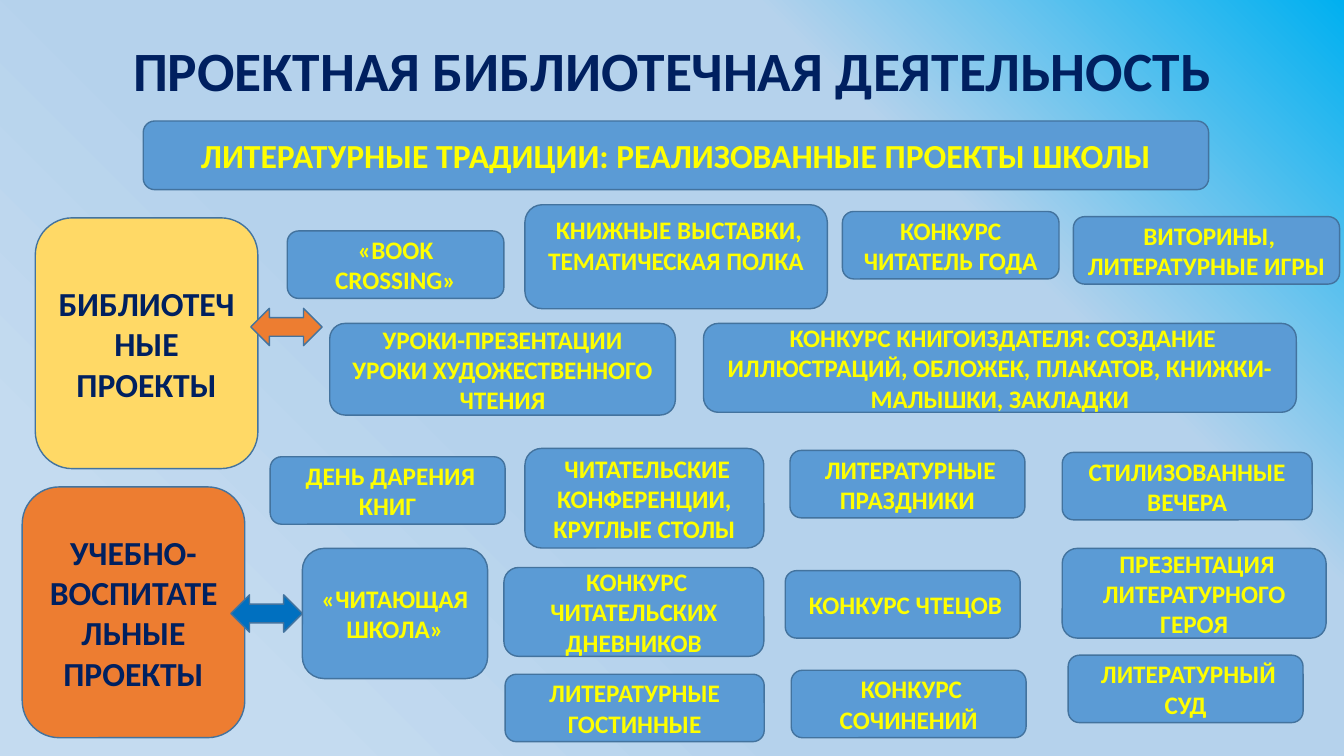
from lxml import etree
from pptx import Presentation
from pptx.dml.color import RGBColor
from pptx.enum import shapes, text
from pptx.oxml import ns
from pptx.util import Cm, Pt

COLORS = {
    "navy": "002060", "yellow": "FFFF00", "blue": "5B9BD5", "outline": "43739E",
    "sand": "FFD966", "orange": "ED7D31", "deep": "0070C0",
}
BACKDROP = [(0, "00B0F0"), (28, "B5D2EC"), (61, "B5D2EC"), (85, "C4DBF0")]
FONT = "Calibri"
ROW = 1.7  # height of a two-line project box

TITLE = "ПРОЕКТНАЯ БИБЛИОТЕЧНАЯ ДЕЯТЕЛЬНОСТЬ"
TITLE_BOX = (2.34, 1.02, 29.21, 1.65)
BANNER = "ЛИТЕРАТУРНЫЕ ТРАДИЦИИ: РЕАЛИЗОВАННЫЕ ПРОЕКТЫ ШКОЛЫ"
BANNER_BOX = (3.61, 3.05, 26.85, 1.73)
EXHIBITIONS = " КНИЖНЫЕ ВЫСТАВКИ, ТЕМАТИЧЕСКАЯ ПОЛКА"

# Text, then left, top, width and height in centimetres
PROJECTS = [
    ("«BOOK CROSSING»", 7.24, 5.82, 5.46, ROW),
    (EXHIBITIONS, 13.23, 5.16, 7.62, 2.62),
    ("КОНКУРС ЧИТАТЕЛЬ ГОДА", 21.23, 5.33, 5.46, ROW),
    (" ВИТОРИНЫ, ЛИТЕРАТУРНЫЕ ИГРЫ ", 27.05, 5.46, 6.71, ROW),
    ("УРОКИ-ПРЕЗЕНТАЦИИ\nУРОКИ ХУДОЖЕСТВЕННОГО ЧТЕНИЯ", 8.31, 8.15, 8.71, 2.31),
    (" КОНКУРС КНИГОИЗДАТЕЛЯ: СОЗДАНИЕ ИЛЛЮСТРАЦИЙ, ОБЛОЖЕК, ПЛАКАТОВ, "
     "КНИЖКИ-МАЛЫШКИ, ЗАКЛАДКИ", 17.73, 8.15, 14.94, 2.24),
    (" ДЕНЬ ДАРЕНИЯ КНИГ", 6.81, 11.51, 5.92, ROW),
    (" ЧИТАТЕЛЬСКИЕ КОНФЕРЕНЦИИ, КРУГЛЫЕ СТОЛЫ", 13.23, 11.3, 6.02, 2.51),
    (" ЛИТЕРАТУРНЫЕ ПРАЗДНИКИ", 19.91, 11.35, 5.92, ROW),
    ("СТИЛИЗОВАННЫЕ ВЕЧЕРА", 26.77, 11.4, 6.3, ROW),
    ("«ЧИТАЮЩАЯ ШКОЛА»", 7.62, 13.82, 4.67, 3.28),
    (" КОНКУРС ЧИТАТЕЛЬСКИХ ДНЕВНИКОВ", 12.7, 14.3, 6.55, 2.24),
    (" КОНКУРС ЧТЕЦОВ", 19.79, 14.38, 5.92, ROW),
    (" ПРЕЗЕНТАЦИЯ ЛИТЕРАТУРНОГО ГЕРОЯ", 26.77, 13.82, 6.65, 2.26),
    ("ЛИТЕРАТУРНЫЕ ГОСТИННЫЕ", 12.73, 16.99, 6.53, ROW),
    (" КОНКУРС СОЧИНЕНИЙ", 19.94, 16.89, 5.92, ROW),
    (" ЛИТЕРАТУРНЫЙ СУД", 26.92, 16.51, 5.92, ROW),
]
# Text, panel corner and colour, arrow corner and colour
GROUPS = [
    ("БИБЛИОТЕЧНЫЕ ПРОЕКТЫ", (0.89, 5.49), "sand", (6.32, 7.77), "orange"),
    ("УЧЕБНО-ВОСПИТАТЕЛЬНЫЕ ПРОЕКТЫ", (0.56, 12.27), "orange", (5.82, 14.99), "deep"),
]
PANEL_SIZE = (5.61, 6.32)
ARROW_SIZE = (1.8, 0.94)


def rgb(name):
    return RGBColor.from_string(COLORS[name])


def write(frame, words, size, color):
    frame.text = words
    frame.word_wrap = True
    frame.vertical_anchor = text.MSO_ANCHOR.MIDDLE
    for paragraph in frame.paragraphs:
        paragraph.alignment = text.PP_ALIGN.CENTER
        for run in paragraph.runs:
            run.font.name = FONT
            run.font.size = Pt(size)
            run.font.bold = True
            run.font.color.rgb = rgb(color)


def add_figure(slide, kind, box, fill):
    figure = slide.shapes.add_shape(kind, *map(Cm, box))
    figure.shadow.inherit = False
    figure.fill.solid()
    figure.fill.fore_color.rgb = rgb(fill)
    figure.line.color.rgb = rgb("outline")
    figure.line.width = Pt(1)
    return figure


def paint_backdrop(slide):
    fill = slide.background.fill
    fill.gradient()
    fill.gradient_angle = 225
    stops = slide.background._cSld.find(".//" + ns.qn("a:gsLst"))
    for stop in list(stops):
        stops.remove(stop)
    for percent, color in BACKDROP:
        stop = etree.SubElement(stops, ns.qn("a:gs"), pos=str(percent * 1000))
        etree.SubElement(stop, ns.qn("a:srgbClr"), val=color)


def main():
    deck = Presentation()
    deck.slide_width, deck.slide_height = Cm(33.87), Cm(19.05)
    slide = deck.slides.add_slide(deck.slide_layouts[5])
    paint_backdrop(slide)

    title = slide.shapes.title
    title.left, title.top, title.width, title.height = map(Cm, TITLE_BOX)
    write(title.text_frame, TITLE, 39.6, "navy")
    title.text_frame.auto_size = text.MSO_AUTO_SIZE.NONE
    title.text_frame.paragraphs[0].line_spacing = 0.9

    rounded = shapes.MSO_SHAPE.FLOWCHART_ALTERNATE_PROCESS
    banner = add_figure(slide, rounded, BANNER_BOX, "blue")
    write(banner.text_frame, BANNER, 24, "yellow")

    for words, *box in PROJECTS:
        project = add_figure(slide, rounded, box, "blue")
        write(project.text_frame, words, 18, "yellow")
        if words == EXHIBITIONS:
            project.text_frame.vertical_anchor = text.MSO_ANCHOR.TOP

    for words, corner, panel_color, arrow_corner, arrow_color in GROUPS:
        panel = add_figure(slide, shapes.MSO_SHAPE.ROUNDED_RECTANGLE,
                           corner + PANEL_SIZE, panel_color)
        write(panel.text_frame, words, 24, "navy")
        add_figure(slide, shapes.MSO_SHAPE.LEFT_RIGHT_ARROW,
                   arrow_corner + ARROW_SIZE, arrow_color)

    deck.save("out.pptx")


if __name__ == "__main__":
    main()
